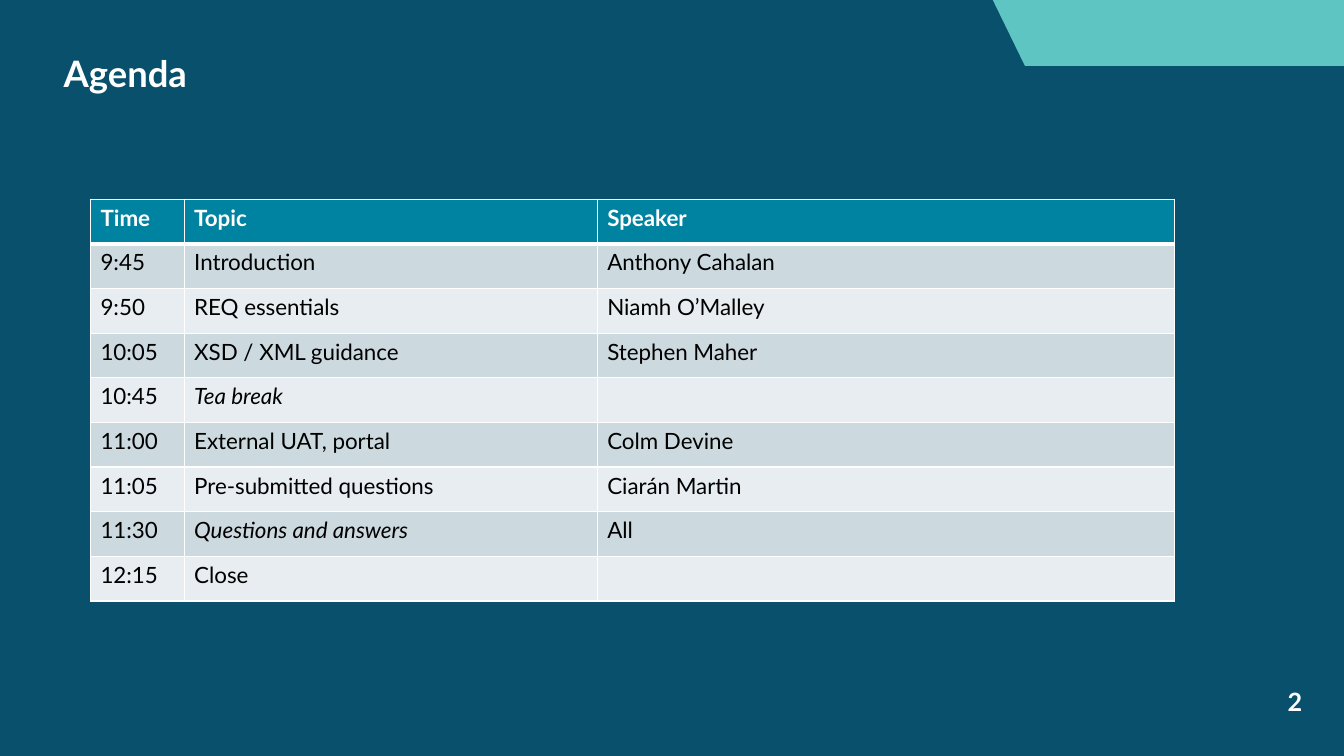
from dataclasses import dataclass
from lxml import etree
from pptx import Presentation
from pptx.dml.color import RGBColor
from pptx.enum.text import MSO_ANCHOR, MSO_AUTO_SIZE, PP_ALIGN
from pptx.oxml.ns import qn
from pptx.util import Cm, Pt

MIDDLE = MSO_ANCHOR.MIDDLE
FIXED = MSO_AUTO_SIZE.NONE
LEFT, RIGHT = PP_ALIGN.LEFT, PP_ALIGN.RIGHT


@dataclass
class Theme:
    font: str = "Lato"
    back: str = "09506C"
    mint: str = "5EC5C2"
    head: str = "0083A0"
    odd: str = "CCD9DF"
    even: str = "E7EDF0"
    white: str = "FFFFFF"
    black: str = "000000"
    title: int = 26
    page: int = 18
    cell: int = 16


def style(para, size, color, bold=False, slant=False):
    for run in para.runs:
        font = run.font
        font.name, font.size = theme.font, Pt(size)
        font.bold, font.italic = bold, slant
        font.color.rgb = RGBColor.from_string(color)


def border(cell, side, width):
    line = etree.SubElement(cell._tc.get_or_add_tcPr(), qn(f"a:ln{side}"), w=str(Pt(width)))
    fill = etree.SubElement(line, qn("a:solidFill"))
    etree.SubElement(fill, qn("a:srgbClr"), val=theme.white)


theme = Theme()
deck = Presentation()
deck.slide_width, deck.slide_height = Cm(33.87), Cm(19.05)
slide = deck.slides.add_slide(deck.slide_layouts[5])
slide.background.fill.solid()
slide.background.fill.fore_color.rgb = RGBColor.from_string(theme.back)

pen = slide.shapes.build_freeform(Cm(25.02), 0)
pen.add_line_segments([(Cm(33.87), 0), (Cm(33.87), Cm(1.66)), (Cm(25.83), Cm(1.66))])
banner = pen.convert_to_shape()
banner.shadow.inherit = False
banner.fill.solid()
banner.fill.fore_color.rgb = RGBColor.from_string(theme.mint)
banner.line.fill.background()

title = slide.shapes.title
title.left, title.top, title.width, title.height = Cm(1.35), Cm(1.4), Cm(22.43), Cm(1.04)
page = slide.shapes.add_textbox(Cm(30.4), Cm(17.17), Cm(2.67), Cm(1.02))
for shape, text, size, align in (
    (title, "Agenda", theme.title, LEFT),
    (page, "2", theme.page, RIGHT),
):
    frame = shape.text_frame
    frame.text = text
    frame.word_wrap = True
    frame.auto_size = FIXED
    frame.vertical_anchor = MIDDLE
    para = frame.paragraphs[0]
    para.alignment = align
    style(para, size, theme.white, True)
title.text_frame.paragraphs[0].line_spacing = 0.9

agenda = [
    ("Time", "Topic", "Speaker"),
    ("9:45", "Introduction", "Anthony Cahalan"),
    ("9:50", "REQ essentials", "Niamh O’Malley"),
    ("10:05", "XSD / XML guidance", "Stephen Maher"),
    ("10:45", "Tea break", ""),
    ("11:00", "External UAT, portal", "Colm Devine"),
    ("11:05", "Pre-submitted questions", "Ciarán Martin"),
    ("11:30", "Questions and answers", "All"),
    ("12:15", "Close", ""),
]
slanted = {"Tea break", "Questions and answers"}
widths = [2.36, 10.41, 14.55]
tall = 1.125

table = slide.shapes.add_table(
    len(agenda), len(widths), Cm(2.28), Cm(5.02), Cm(sum(widths)), Cm(tall * len(agenda))
).table
for col, width in zip(table.columns, widths):
    col.width = Cm(width)
for r, row in enumerate(agenda):
    table.rows[r].height = Cm(tall)
    top = r == 0
    shade = theme.head if top else theme.odd if r % 2 else theme.even
    for c, text in enumerate(row):
        cell = table.cell(r, c)
        for side in "LRTB":
            thick = (top and side == "B") or (r == 1 and side == "T")
            border(cell, side, 3 if thick else 1)
        cell.fill.solid()
        cell.fill.fore_color.rgb = RGBColor.from_string(shade)
        cell.text_frame.text = text
        style(
            cell.text_frame.paragraphs[0],
            theme.cell,
            theme.white if top else theme.black,
            top,
            text in slanted,
        )

deck.save("out.pptx")
